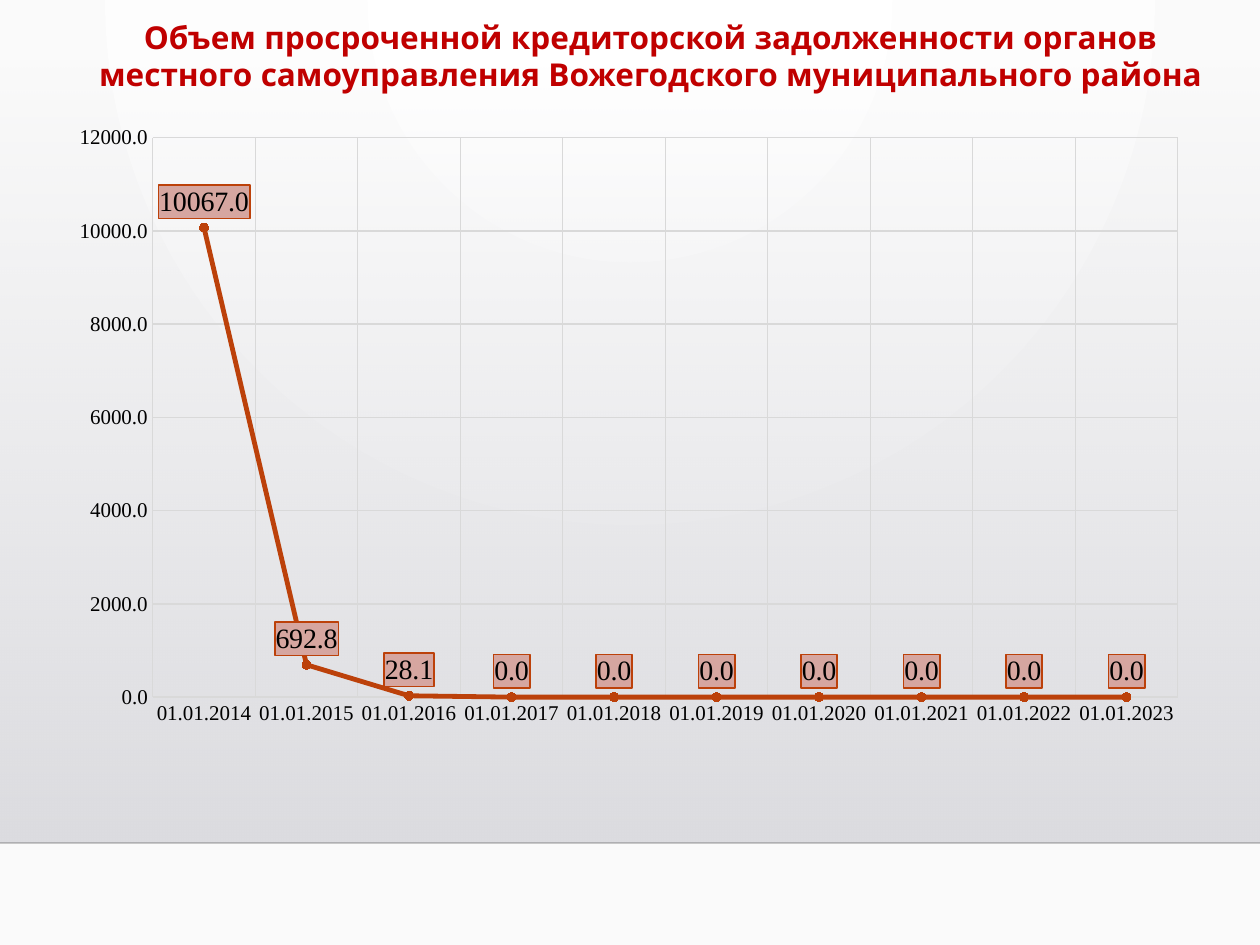
from lxml.etree import SubElement
from pptx import Presentation
from pptx.chart.data import CategoryChartData
from pptx.dml.color import RGBColor
from pptx.enum.chart import XL_CHART_TYPE, XL_LABEL_POSITION, XL_MARKER_STYLE, XL_TICK_MARK
from pptx.enum.shapes import MSO_CONNECTOR, MSO_SHAPE
from pptx.enum.text import MSO_ANCHOR, PP_ALIGN
from pptx.oxml import parse_xml
from pptx.oxml.ns import nsdecls, qn
from pptx.util import Inches, Pt

BLACK = RGBColor(0x00, 0x00, 0x00)
WHITE = RGBColor(0xFF, 0xFF, 0xFF)
NEAR_WHITE = RGBColor(0xFA, 0xFA, 0xFA)
SHADE_TOP = RGBColor(0xDC, 0xDC, 0xE0)
SHADE_BOTTOM = RGBColor(0xDA, 0xDA, 0xDE)
GRID_GRAY = RGBColor(0xD9, 0xD9, 0xD9)
TITLE_RED = RGBColor(0xC0, 0x00, 0x00)
SERIES_ORANGE = RGBColor(0xBC, 0x41, 0x0A)
MARKER_ORANGE = RGBColor(0xAC, 0x35, 0x00)
LABEL_PINK = RGBColor(0xD6, 0xA6, 0xA0)

TITLE = ("Объем просроченной кредиторской задолженности органов "
         "местного самоуправления Вожегодского муниципального района")
DEBTS = [10067, 692.8, 28.1] + [0] * 7
DATES = [f"01.01.{2014 + index}" for index in range(len(DEBTS))]


def write_text(text_frame, text, *, font_name, size, color, bold=False, align=PP_ALIGN.LEFT):
    text_frame.word_wrap = True
    paragraph = text_frame.paragraphs[0]
    paragraph.alignment = align
    run = paragraph.add_run()
    run.text = text
    style_font(run.font, font_name, size, color, bold)


def style_font(font, name, size, color, bold=False):
    font.name = name
    font.size = Pt(size)
    font.bold = bold
    font.color.rgb = color


def style_line(line, color, width):
    line.color.rgb = color
    line.width = Pt(width)


def set_gradient(element, stops, direction):
    stop_xml = "".join(
        f'<a:gs pos="{position * 1000}"><a:srgbClr val="{color}">'
        f'<a:alpha val="{alpha * 1000}"/></a:srgbClr></a:gs>'
        for position, color, alpha in stops)
    gradient = parse_xml(f'<a:gradFill {nsdecls("a")} rotWithShape="1">'
                         f'<a:gsLst>{stop_xml}</a:gsLst>{direction}</a:gradFill>')
    current = element.find(".//" + qn("a:gradFill"))
    current.getparent().replace(current, gradient)


class SlideBuilder:
    title_font = "League Spartan"
    chart_font = "Times New Roman"

    def __init__(self, presentation):
        self.slide = presentation.slides.add_slide(presentation.slide_layouts[5])
        self.shapes = self.slide.shapes

    def background(self):
        self.slide.background.fill.gradient()
        set_gradient(self.slide.element, [(0, WHITE, 100), (100, NEAR_WHITE, 100)],
                     '<a:path path="circle"><a:fillToRect l="43000" r="43000" b="100000"/></a:path>')

    def shade(self, left, top, width, height):
        shape = self.shapes.add_shape(MSO_SHAPE.RECTANGLE, Inches(left), Inches(top),
                                      Inches(width), Inches(height))
        shape.shadow.inherit = False
        shape.line.fill.background()
        shape.fill.gradient()
        set_gradient(shape.element, [(0, SHADE_TOP, 0), (100, SHADE_BOTTOM, 100)],
                     '<a:lin ang="5400000" scaled="0"/>')

    def rule(self, left, top, width):
        connector = self.shapes.add_connector(MSO_CONNECTOR.STRAIGHT, Inches(left), Inches(top),
                                              Inches(left + width), Inches(top))
        style_line(connector.line, BLACK, 1)
        color = connector.element.find(".//" + qn("a:srgbClr"))
        SubElement(color, qn("a:alpha")).set("val", "20000")
        SubElement(connector.element.spPr, qn("a:effectLst"))

    def title(self, text, left, top, width, height):
        title = self.shapes.title
        title.left, title.top = Inches(left), Inches(top)
        title.width, title.height = Inches(width), Inches(height)
        title.text_frame.vertical_anchor = MSO_ANCHOR.TOP
        write_text(title.text_frame, text, font_name=self.title_font, size=18,
                   color=TITLE_RED, bold=True, align=PP_ALIGN.CENTER)
        title.element.getparent().append(title.element)

    def line_chart(self, categories, values, left, top, width, height):
        data = CategoryChartData(number_format="0.0")
        data.categories = categories
        data.add_series("Series 1", values)
        chart = self.shapes.add_chart(XL_CHART_TYPE.LINE_MARKERS, Inches(left), Inches(top),
                                      Inches(width), Inches(height), data).chart
        chart.has_legend = False
        chart.has_title = False
        style_font(chart.font, self.chart_font, 10, BLACK)
        self.axes(chart)
        self.series(chart.plots[0])
        self.plot_area(chart, x=0.084, y=0.039, w=0.896, h=0.899)

    def axes(self, chart):
        for axis in (chart.category_axis, chart.value_axis):
            axis.major_tick_mark = XL_TICK_MARK.NONE
            axis.minor_tick_mark = XL_TICK_MARK.NONE
            axis.has_major_gridlines = True
            style_line(axis.major_gridlines.format.line, GRID_GRAY, 0.75)
            style_font(axis.tick_labels.font, self.chart_font, 12, BLACK)
        style_line(chart.category_axis.format.line, GRID_GRAY, 1)
        value_axis = chart.value_axis
        value_axis.format.line.fill.background()
        value_axis.minimum_scale = 0
        value_axis.maximum_scale = 12000
        value_axis.major_unit = 2000
        value_axis.tick_labels.number_format = "0.0"
        value_axis.tick_labels.number_format_is_linked = False

    def series(self, plot):
        plot.vary_by_categories = False
        series = plot.series[0]
        series.smooth = False
        style_line(series.format.line, SERIES_ORANGE, 2.75)
        marker = series.marker
        marker.style = XL_MARKER_STYLE.CIRCLE
        marker.size = 5
        marker.format.fill.solid()
        marker.format.fill.fore_color.rgb = MARKER_ORANGE
        style_line(marker.format.line, SERIES_ORANGE, 1)
        labels = series.data_labels
        labels.show_value = True
        labels.position = XL_LABEL_POSITION.ABOVE
        labels.number_format = "0.0"
        labels.number_format_is_linked = False
        style_font(labels.font, self.chart_font, 16, BLACK)
        box = parse_xml(
            f'<c:spPr {nsdecls("c", "a")}><a:solidFill><a:srgbClr val="{LABEL_PINK}"/></a:solidFill>'
            f'<a:ln w="{Pt(1)}"><a:solidFill><a:srgbClr val="{SERIES_ORANGE}"/></a:solidFill></a:ln></c:spPr>')
        series._element.find(".//" + qn("c:dLbls") + "/" + qn("c:txPr")).addprevious(box)

    def plot_area(self, chart, **fractions):
        plot_area = chart._chartSpace.chart.plotArea
        for layout in plot_area.findall(qn("c:layout")):
            plot_area.remove(layout)
        places = "".join(f'<c:{name} val="{value}"/>' for name, value in fractions.items())
        plot_area.insert(0, parse_xml(
            f'<c:layout {nsdecls("c")}><c:manualLayout><c:layoutTarget val="inner"/>'
            f'<c:xMode val="edge"/><c:yMode val="edge"/>{places}</c:manualLayout></c:layout>'))


def main():
    presentation = Presentation()
    presentation.slide_width = Inches(10)
    presentation.slide_height = Inches(7.5)
    builder = SlideBuilder(presentation)
    builder.background()
    builder.shade(0, 0.51, 10, 6.18)
    builder.rule(0, 6.69, 10)
    builder.line_chart(DATES, DEBTS, 0.45, 0.9, 9.08, 4.94)
    builder.title(TITLE, 0.49, 0.09, 9.35, 0.71)
    presentation.save("out.pptx")


if __name__ == "__main__":
    main()
